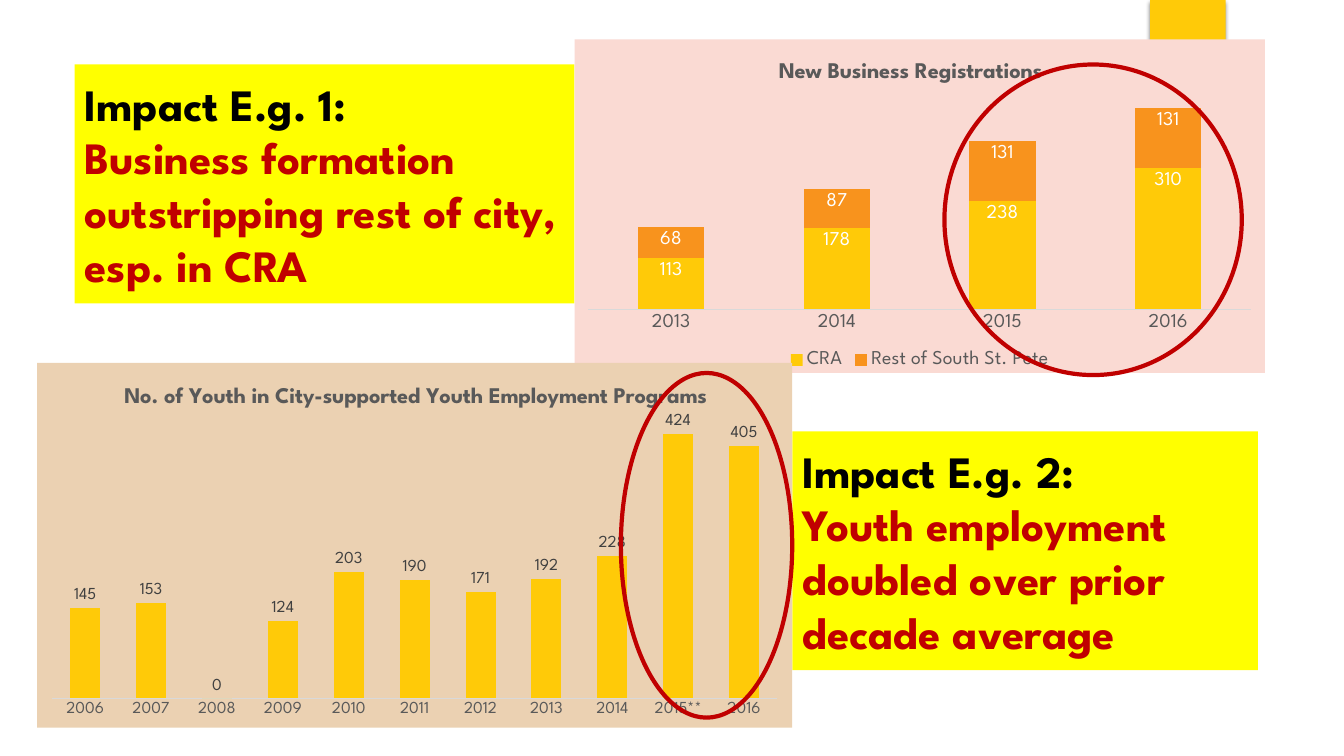
"""Build a slide with two impact notes beside two bar charts."""
from lxml import etree
from pptx import Presentation
from pptx.chart.data import CategoryChartData
from pptx.dml.color import RGBColor
from pptx.enum.chart import XL_CHART_TYPE, XL_LABEL_POSITION, XL_LEGEND_POSITION, XL_TICK_MARK
from pptx.enum.shapes import MSO_SHAPE
from pptx.enum.text import MSO_ANCHOR, PP_ALIGN
from pptx.oxml import parse_xml
from pptx.oxml.ns import qn
from pptx.util import Pt

RECT, OVAL = MSO_SHAPE.RECTANGLE, MSO_SHAPE.OVAL
STACK, CLUSTER = XL_CHART_TYPE.COLUMN_STACKED, XL_CHART_TYPE.COLUMN_CLUSTERED
IN_END, OUT_END = XL_LABEL_POSITION.INSIDE_END, XL_LABEL_POSITION.OUTSIDE_END
BOTTOM, NO_TICK = XL_LEGEND_POSITION.BOTTOM, XL_TICK_MARK.NONE
MIDDLE, LEFT = MSO_ANCHOR.MIDDLE, PP_ALIGN.LEFT
FACE = "League Spartan"
GOLD, ORANGE, YELLOW, RED = "FFCA08", "F8931D", "FFFF00", "C00000"
BLACK, WHITE, GREY, DARK, PALE = "000000", "FFFFFF", "595959", "404040", "D9D9D9"
A = "http://schemas.openxmlformats.org/drawingml/2006/main"
C = "http://schemas.openxmlformats.org/drawingml/2006/chart"
rgb = RGBColor.from_string


def write(para, text, size=32, color=BLACK, bold=True):
    run = para.add_run()
    run.text = text
    font = run.font
    font.name, font.size, font.bold = FACE, Pt(size), bold
    font.color.rgb = rgb(color)


def place(part, index, **spots):
    for old in part.findall(qn("c:layout")):
        part.remove(old)
    layout = etree.Element(qn("c:layout"))
    manual = etree.SubElement(layout, qn("c:manualLayout"))
    if "w" in spots:
        etree.SubElement(manual, qn("c:layoutTarget"), val="inner")
    for key in "xy":
        etree.SubElement(manual, qn(f"c:{key}Mode"), val="edge")
    for key, spot in spots.items():
        etree.SubElement(manual, qn(f"c:{key}"), val=str(spot))
    part.insert(index, layout)


deck = Presentation()
deck.slide_width, deck.slide_height = Pt(960), Pt(540)
slide = deck.slides.add_slide(deck.slide_layouts[6])
shapes = slide.shapes

tab = shapes.add_shape(RECT, Pt(821.5), Pt(0), Pt(54), Pt(90))
tab.fill.solid()
tab.fill.fore_color.rgb = rgb(GOLD)
tab.line.fill.background()
tab._element.spPr.append(parse_xml(
    f'<a:effectLst xmlns:a="{A}"><a:outerShdw blurRad="{Pt(3)}" dist="{Pt(2)}" dir="5400000">'
    '<a:srgbClr val="000000"><a:alpha val="45000"/></a:srgbClr></a:outerShdw></a:effectLst>'))

notes = [
    (53.3, 46.1, 357.1, "Impact E.g. 1:",
     "Business formation outstripping rest of city, esp. in CRA"),
    (565.9, 308.2, 332.6, "Impact E.g. 2:",
     "Youth employment doubled over prior decade average"),
]
for x, y, wide, head, body in notes:
    note = shapes.add_shape(RECT, Pt(x), Pt(y), Pt(wide), Pt(170.6))
    note.shadow.inherit = False
    note.fill.solid()
    note.fill.fore_color.rgb = rgb(YELLOW)
    note.line.fill.background()
    frame = note.text_frame
    frame.word_wrap, frame.vertical_anchor = True, MIDDLE
    lines = [frame.paragraphs[0], frame.add_paragraph()]
    for para, text, color in zip(lines, (head, body), (BLACK, RED)):
        para.alignment = LEFT
        write(para, text, color=color)

charts = [
    dict(kind=STACK, box=(410.4, 28.1, 493.2, 238.3), back="FADAD3", size=14,
         title="New Business Registrations", spot=dict(x=0.29, y=0.05),
         plot=dict(x=0.02, y=0.16, w=0.96, h=0.65), top=475, gap=150, lap=100,
         cats=range(2013, 2017), pos=IN_END, ink=WHITE,
         rows=[("CRA", GOLD, (113, 178, 238, 310)),
               ("Rest of South St. Pete", ORANGE, (68, 87, 131, 131))]),
    dict(kind=CLUSTER, box=(26.6, 259.2, 539.3, 260.6), back="EBD1B2", size=12,
         title="No. of Youth in City-supported Youth Employment Programs",
         spot=dict(x=0.11, y=0.05),
         plot=dict(x=0.02, y=0.15, w=0.96, h=0.77), top=450, gap=120, lap=-27,
         cats=[*range(2006, 2015), "2015**", 2016], pos=OUT_END, ink=DARK,
         rows=[("Series 1", GOLD,
                (145, 153, 0, 124, 203, 190, 171, 192, 228, 424, 405))]),
]
for item in charts:
    data = CategoryChartData()
    data.categories = [str(cat) for cat in item["cats"]]
    for name, color, vals in item["rows"]:
        data.add_series(name, vals)
    box = [Pt(n) for n in item["box"]]
    chart = shapes.add_chart(item["kind"], *box, data).chart
    size = Pt(item["size"])
    chart.font.name, chart.font.size = FACE, size
    chart.font.color.rgb = rgb(GREY)

    write(chart.chart_title.text_frame.paragraphs[0], item["title"], size=16, color=GREY)
    space = chart._chartSpace
    place(space.chart.find(qn("c:title")), 1, **item["spot"])
    place(space.chart.plotArea, 0, **item["plot"])
    space.chart.addnext(parse_xml(
        f'<c:spPr xmlns:c="{C}" xmlns:a="{A}"><a:solidFill><a:srgbClr val="{item["back"]}"/>'
        '</a:solidFill><a:ln><a:noFill/></a:ln></c:spPr>'))

    axis = chart.category_axis
    axis.major_tick_mark = axis.minor_tick_mark = NO_TICK
    axis.format.line.color.rgb = rgb(PALE)
    axis.format.line.width = Pt(0.75)
    scale = chart.value_axis
    scale.visible = scale.has_major_gridlines = False
    scale.minimum_scale, scale.maximum_scale = 0, item["top"]

    plot = chart.plots[0]
    plot.gap_width, plot.overlap, plot.vary_by_categories = item["gap"], item["lap"], False
    for bars, (name, color, vals) in zip(plot.series, item["rows"]):
        bars.format.fill.solid()
        bars.format.fill.fore_color.rgb = rgb(color)
        labels = bars.data_labels
        labels.show_value, labels.position = True, item["pos"]
        labels.font.name, labels.font.size = FACE, size
        labels.font.color.rgb = rgb(item["ink"])

    chart.has_legend = len(item["rows"]) > 1
    if chart.has_legend:
        chart.legend.position = BOTTOM
        chart.legend.include_in_layout = False

for spot in [(443.5, 266.4, 122.4, 246.2), (674.6, 46.1, 212.4, 221.8)]:
    ring = shapes.add_shape(OVAL, *[Pt(n) for n in spot])
    ring.shadow.inherit = False
    ring.fill.background()
    ring.line.color.rgb = rgb(RED)
    ring.line.width = Pt(3)

deck.save("out.pptx")
